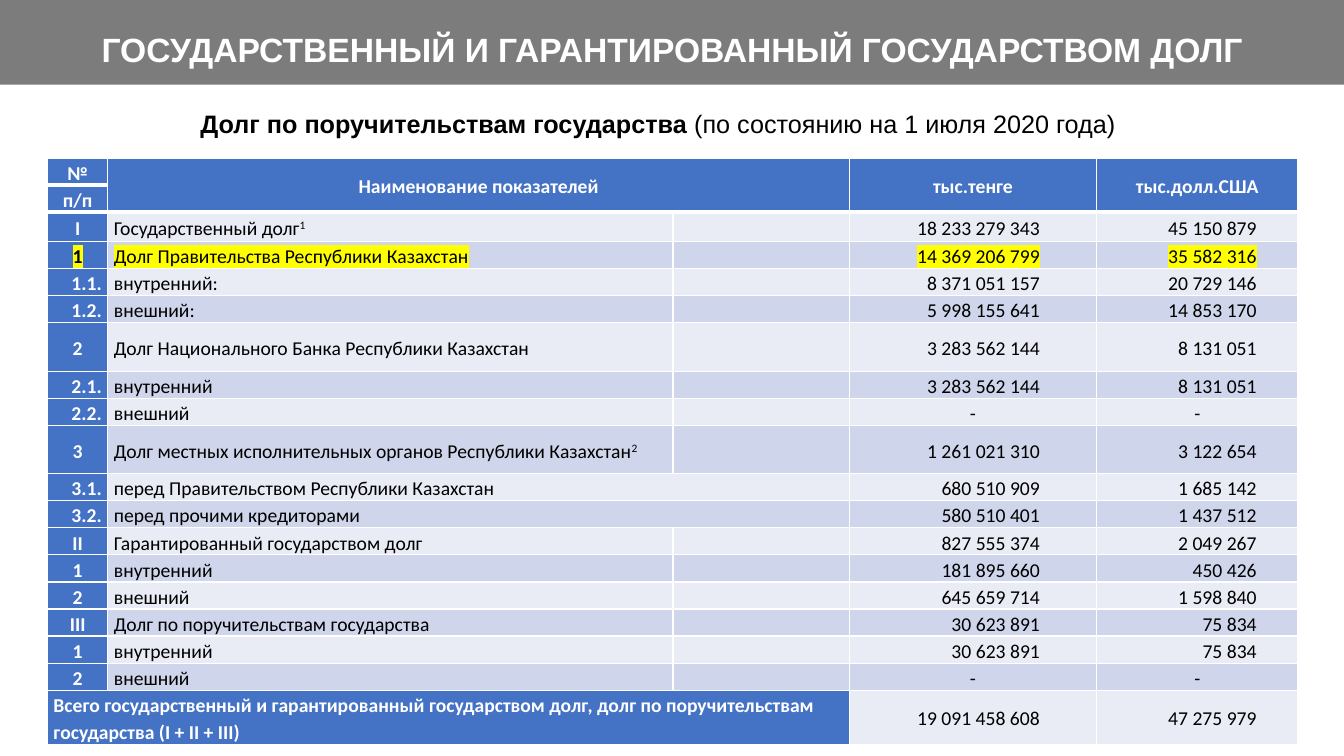
import dataclasses

import lxml.etree
import pptx
import pptx.dml.color
import pptx.enum.shapes
import pptx.enum.text
import pptx.oxml.ns
import pptx.util

COLORS = {
    "band": "7C7C7C", "white": "FFFFFF", "black": "000000", "key": "4472C4",
    "light": "E9EBF5", "dark": "CFD5EA", "marker": "FFFF00",
}
WIDTH, HEIGHT = pptx.util.Inches(13.33), pptx.util.Inches(7.5)
ALIGN = pptx.enum.text.PP_ALIGN
ANCHOR = pptx.enum.text.MSO_ANCHOR

# Percent of the slide's width and height
COLUMNS = [4.5, 42.05, 13.13, 18.38, 15]
ROW, FIRST_ROW, TALL_ROW = 3.2, 3.87, 6.4
# Right margins of the number columns, in inches
NUMBER_MARGINS = {3: 0.56, 4: 0.41}
HEADINGS = {1: "Наименование показателей", 3: "тыс.тенге", 4: "тыс.долл.США"}


@dataclasses.dataclass
class Debt:
    number: str
    name: str
    tenge: str
    dollars: str
    note: str = ""
    height: float = ROW
    marked: bool = False
    wide: bool = False


@dataclasses.dataclass
class Style:
    fill: str
    color: str = "black"
    bold: bool = False
    align: ALIGN = ALIGN.LEFT
    anchor: ANCHOR = ANCHOR.MIDDLE
    right: float = 0.06
    marked: bool = False


DEBTS = [
    Debt("I", "Государственный долг", "18 233 279 343", "45 150 879", note="1", height=FIRST_ROW),
    Debt("1", "Долг Правительства Республики Казахстан", "14 369 206 799", "35 582 316", marked=True),
    Debt("1.1.", "внутренний:", "8 371 051 157", "20 729 146"),
    Debt("1.2.", "внешний:", "5 998 155 641", "14 853 170"),
    Debt("2", "Долг Национального Банка Республики Казахстан", "3 283 562 144", "8 131 051",
         height=TALL_ROW),
    Debt("2.1.", "внутренний", "3 283 562 144", "8 131 051"),
    Debt("2.2.", "внешний", "-", "-"),
    Debt("3", "Долг местных исполнительных органов Республики Казахстан", "1 261 021 310",
         "3 122 654", note="2", height=TALL_ROW),
    Debt("3.1.", "перед Правительством Республики Казахстан", "680 510 909", "1 685 142", wide=True),
    Debt("3.2.", "перед прочими кредиторами", "580 510 401", "1 437 512", wide=True),
    Debt("II", "Гарантированный государством долг", "827 555 374", "2 049 267"),
    Debt("1", "внутренний", "181 895 660", "450 426"),
    Debt("2", "внешний", "645 659 714", "1 598 840"),
    Debt("III", "Долг по поручительствам государства", "30 623 891", "75 834"),
    Debt("1", "внутренний", "30 623 891", "75 834"),
    Debt("2", "внешний", "-", "-"),
]
TOTAL = Debt("Всего государственный и гарантированный государством долг, "
             "долг по поручительствам государства (I + II + III)",
             "", "19 091 458 608", "47 275 979", height=TALL_ROW)


def across(percent: float) -> int:
    return round(WIDTH * percent / 100)


def down(percent: float) -> int:
    return round(HEIGHT * percent / 100)


def rgb(color: str) -> pptx.dml.color.RGBColor:
    return pptx.dml.color.RGBColor.from_string(COLORS[color])


def add_run(paragraph, text: str, color: str, **formats):
    run = paragraph.add_run()
    run.text = text
    for attribute, value in formats.items():
        setattr(run.font, attribute, value)
    run.font.color.rgb = rgb(color)
    return run


def add_element(parent, tag: str, **attributes: str):
    element = lxml.etree.SubElement(parent, pptx.oxml.ns.qn(tag))
    for name, value in attributes.items():
        element.set(name, value)
    return element


def highlight(run) -> None:
    properties = run._r.get_or_add_rPr()
    marker = add_element(properties, "a:highlight")
    add_element(marker, "a:srgbClr", val=COLORS["marker"])
    properties.find(pptx.oxml.ns.qn("a:solidFill")).addnext(marker)


def add_borders(cell, row: int) -> None:
    widths = {"L": 1, "R": 1, "T": 3 if row in (1, 2) else 1, "B": 3 if row < 2 else 1}
    for side, width in widths.items():
        line = add_element(cell._tc.get_or_add_tcPr(), f"a:ln{side}", w=str(pptx.util.Pt(width)))
        add_element(add_element(line, "a:solidFill"), "a:srgbClr", val=COLORS["white"])


def fill_cell(cell, row: int, text: str, style: Style, note: str = "") -> None:
    add_borders(cell, row)
    cell.fill.solid()
    cell.fill.fore_color.rgb = rgb(style.fill)
    layout = {"margin_left": pptx.util.Inches(0.06), "margin_right": pptx.util.Inches(style.right),
              "margin_top": 0, "margin_bottom": 0, "vertical_anchor": style.anchor}
    for attribute, value in layout.items():
        setattr(cell, attribute, value)
    paragraph = cell.text_frame.paragraphs[0]
    paragraph.alignment = style.align
    paragraph.line_spacing = 1.15
    formats = {"name": "Calibri", "size": pptx.util.Pt(14), "bold": style.bold}
    if not text:
        add_element(paragraph._p, "a:endParaRPr", sz="1400")
        return
    run = add_run(paragraph, text, style.color, **formats)
    if style.marked:
        highlight(run)
    if note:
        mark = add_run(paragraph, note, style.color, **formats)
        mark._r.get_or_add_rPr().set("baseline", "30000")


def fill_debt(table, row: int, debt: Debt) -> None:
    band = "dark" if row % 2 else "light"
    number_align = ALIGN.RIGHT if "." in debt.number else ALIGN.CENTER
    number = Style("key", "black" if debt.marked else "white", True, number_align, marked=debt.marked)
    if debt is TOTAL:
        number.align = ALIGN.LEFT
    fill_cell(table.cell(row, 0), row, debt.number, number)
    fill_cell(table.cell(row, 1), row, debt.name, Style(band, marked=debt.marked), debt.note)
    fill_cell(table.cell(row, 2), row, "", Style(band))
    for column, amount in zip(NUMBER_MARGINS, (debt.tenge, debt.dollars)):
        style = Style(band, align=ALIGN.CENTER, marked=debt.marked)
        if amount != "-":
            style.align, style.right = ALIGN.RIGHT, NUMBER_MARGINS[column]
        fill_cell(table.cell(row, column), row, amount, style)
    if debt.wide:
        table.cell(row, 1).merge(table.cell(row, 2))


def add_debt_table(slide) -> None:
    rows = [*DEBTS, TOTAL]
    heights = [ROW, ROW] + [debt.height for debt in rows]
    table = slide.shapes.add_table(len(heights), len(COLUMNS), across(3.53), down(20.93),
                                   across(sum(COLUMNS)), down(sum(heights))).table
    table.first_row = table.horz_banding = False
    for column, width in zip(table.columns, COLUMNS):
        column.width = across(width)
    for row, height in zip(table.rows, heights):
        row.height = down(height)

    # Two header rows
    for row, label in enumerate(("№", "п/п")):
        fill_cell(table.cell(row, 0), row, label,
                  Style("key", "white", True, ALIGN.CENTER, ANCHOR.BOTTOM))
        for column in range(1, len(COLUMNS)):
            heading = HEADINGS.get(column, "") if row == 0 else ""
            fill_cell(table.cell(row, column), row, heading,
                      Style("key", "white", True, ALIGN.CENTER))
    for first, last in ((1, 2), (3, 3), (4, 4)):
        table.cell(0, first).merge(table.cell(1, last))

    # Debts and their total
    for row, debt in enumerate(rows, start=2):
        fill_debt(table, row, debt)
    table.cell(len(heights) - 1, 0).merge(table.cell(len(heights) - 1, 2))


def main() -> None:
    deck = pptx.Presentation()
    deck.slide_width, deck.slide_height = WIDTH, HEIGHT
    slide = deck.slides.add_slide(deck.slide_layouts[5])

    # Header band with the title on it
    band = slide.shapes.add_shape(pptx.enum.shapes.MSO_SHAPE.RECTANGLE, 0, 0, WIDTH, down(11.2))
    band.shadow.inherit = False
    band.fill.solid()
    band.fill.fore_color.rgb = rgb("band")
    band.line.fill.background()
    title = slide.shapes.title
    band.element.addnext(title.element)
    title.left, title.top, title.width, title.height = across(1.35), down(2.4), across(97.3), down(7.2)
    title.text_frame.vertical_anchor = ANCHOR.TOP
    title.text_frame.auto_size = pptx.enum.text.MSO_AUTO_SIZE.SHAPE_TO_FIT_TEXT
    heading = title.text_frame.paragraphs[0]
    heading.alignment, heading.line_spacing = ALIGN.CENTER, 1.15
    add_run(heading, "ГОСУДАРСТВЕННЫЙ И ГАРАНТИРОВАННЫЙ ГОСУДАРСТВОМ ДОЛГ", "white",
            name="Arial", size=pptx.util.Pt(24), bold=True)

    # Subtitle
    subtitle = slide.shapes.add_textbox(across(14.18), down(13.73), across(71.64), down(5.33))
    subtitle.text_frame.word_wrap = True
    for text, bold in (("Долг по поручительствам государства ", True),
                       ("(по состоянию на 1 июля 2020 года)", False)):
        add_run(subtitle.text_frame.paragraphs[0], text, "black",
                name="Arial", size=pptx.util.Pt(18), bold=bold)

    add_debt_table(slide)
    deck.save("out.pptx")


if __name__ == "__main__":
    main()
